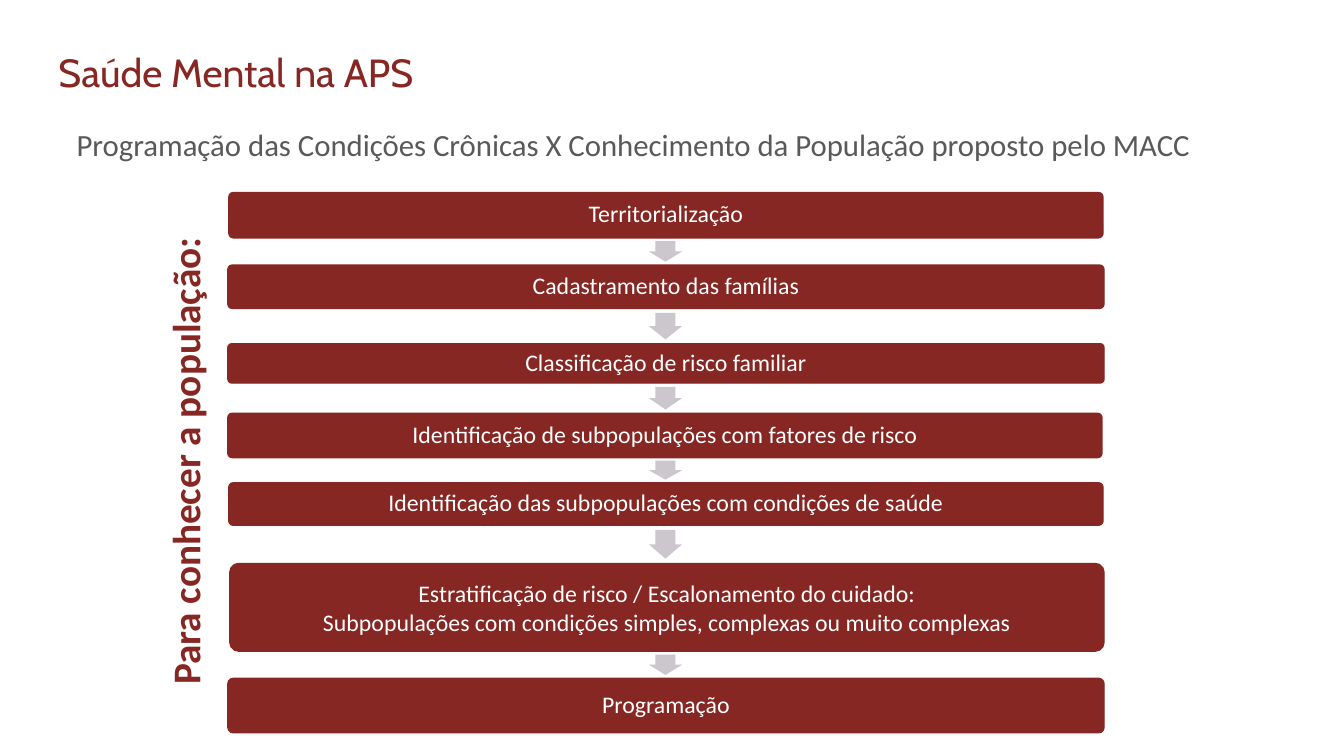
from itertools import pairwise

from pptx import Presentation
from pptx.dml.color import RGBColor
from pptx.enum.shapes import MSO_SHAPE
from pptx.enum.text import MSO_ANCHOR, MSO_AUTO_SIZE, PP_ALIGN
from pptx.util import Inches, Pt
from lxml.etree import SubElement
from pptx.oxml.ns import qn

WINE, GRAY, LILAC, WHITE = "862723", "595959", "CCC6CD", "FFFFFF"
TITLE_FONT = {"name": "Cabin", "size": Pt(28), "bold": False}
LEAD_FONT = {"name": "Calibri", "size": Pt(22)}
STEP_FONT = {"name": "Calibri", "size": Pt(17)}
LABEL_FONT = {"name": "Calibri", "size": Pt(28), "bold": True}

# Each step: left, top, width, height, lines
STEPS = [
    (2.27, 1.91, 8.67, 0.45, ["Territorialização"]),
    (2.26, 2.63, 8.69, 0.43, ["Cadastramento das famílias"]),
    (2.26, 3.41, 8.69, 0.39, ["Classificação de risco familiar"]),
    (2.26, 4.10, 8.67, 0.44, ["Identificação de subpopulações com fatores de risco"]),
    (2.27, 4.79, 8.67, 0.42, ["Identificação das subpopulações com condições de saúde"]),
    (2.28, 5.59, 8.67, 0.87, [
        "Estratificação de risco / Escalonamento do cuidado:",
        "Subpopulações com condições simples, complexas ou muito complexas",
    ]),
    (2.26, 6.73, 8.69, 0.54, ["Programação"]),
]


def color(value):
    return RGBColor.from_string(value)


def style(target, values):
    for name, value in values.items():
        setattr(target, name, value)


def write(paragraph, text, font, tint, **layout):
    paragraph.text = text
    style(paragraph, layout)
    style(paragraph.font, font)
    paragraph.font.color.rgb = color(tint)


def place(shape, left, top, width, height):
    style(shape, {"left": Inches(left), "top": Inches(top),
                  "width": Inches(width), "height": Inches(height)})


def add_filled(slide, preset, box, fill, adjustments):
    shape = slide.shapes.add_shape(preset, *map(Inches, box))
    shape.shadow.inherit = False
    shape.fill.solid()
    shape.fill.fore_color.rgb = color(fill)
    for index, value in enumerate(adjustments):
        shape.adjustments[index] = value
    return shape


def add_heading(placeholder, box, text, font, tint, align):
    place(placeholder, *box)
    frame = placeholder.text_frame
    style(frame, {"word_wrap": True, "auto_size": MSO_AUTO_SIZE.NONE,
                  "vertical_anchor": MSO_ANCHOR.TOP})
    heading = frame.paragraphs[0]
    properties = heading._p.get_or_add_pPr()
    properties.set("marL", "0")
    properties.set("indent", "0")
    SubElement(properties, qn("a:buNone"))
    write(heading, text, font, tint, alignment=align, space_before=Pt(0))


def add_step(slide, box, lines):
    step = add_filled(slide, MSO_SHAPE.ROUNDED_RECTANGLE, box, WINE, [0.1])
    step.line.color.rgb = color(WINE)
    step.line.width = Pt(1)
    frame = step.text_frame
    style(frame, {"word_wrap": True, "vertical_anchor": MSO_ANCHOR.MIDDLE})
    style(frame, dict.fromkeys(
        ("margin_left", "margin_top", "margin_right", "margin_bottom"), Inches(0.07)))
    spacing = 0.9 if len(lines) == 1 else 1.0
    for index, line in enumerate(lines):
        paragraph = frame.add_paragraph() if index else frame.paragraphs[0]
        write(paragraph, line, STEP_FONT, WHITE,
              alignment=PP_ALIGN.CENTER, line_spacing=spacing)


def add_arrow(slide, center, top, bottom, breadth=0.33):
    # Three quarters of the gap, centred in it and turned downwards
    length = 0.75 * (bottom - top)
    box = (center - length / 2, (top + bottom - breadth) / 2, length, breadth)
    arrow = add_filled(slide, MSO_SHAPE.RIGHT_ARROW, box, LILAC, [0.6, 0.5])
    arrow.line.fill.background()
    arrow.rotation = 90


def add_flow(slide, steps):
    for *box, lines in steps:
        add_step(slide, box, lines)
    for upper, lower in pairwise(steps):
        add_arrow(slide, 6.6, upper[1] + upper[3], lower[1])


def add_side_label(slide, box, text):
    label = slide.shapes.add_textbox(*map(Inches, box))
    label.rotation = 270
    label.text_frame.word_wrap = True
    paragraph = label.text_frame.paragraphs[0]
    paragraph._p.get_or_add_pPr().set("marL", str(Inches(0.2)))
    write(paragraph, text, LABEL_FONT, WINE, alignment=PP_ALIGN.LEFT)


def main():
    deck = Presentation()
    deck.slide_width, deck.slide_height = Inches(13.33), Inches(7.5)
    slide = deck.slides.add_slide(deck.slide_layouts[1])

    # Title and lead line
    add_heading(slide.shapes.title, (0.48, 0.43, 7.08, 0.57),
                "Saúde Mental na APS", TITLE_FONT, WINE, PP_ALIGN.LEFT)
    add_heading(slide.placeholders[1], (0.66, 1.2, 11.64, 0.59),
                "Programação das Condições Crônicas X Conhecimento da População "
                "proposto pelo MACC", LEAD_FONT, GRAY, PP_ALIGN.JUSTIFY)

    # Chain of steps with its vertical label
    add_flow(slide, STEPS)
    add_side_label(slide, (-0.85, 3.6, 5.89, 1.09), "Para conhecer a população:")

    deck.save("out.pptx")


if __name__ == "__main__":
    main()
